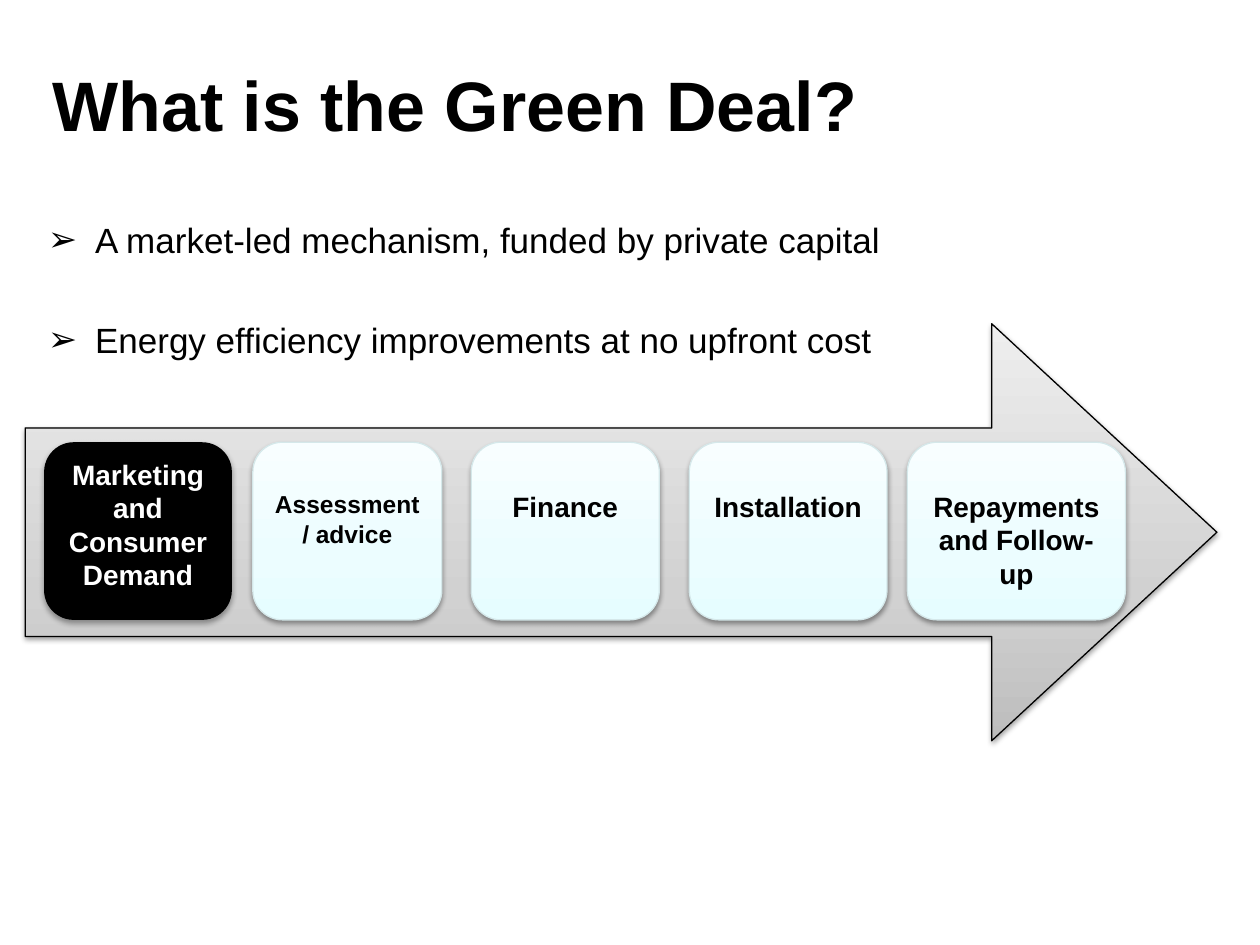
from dataclasses import dataclass

from lxml import etree
from pptx import Presentation
from pptx import util as u
from pptx.dml.color import RGBColor
from pptx.enum import shapes, text
from pptx.oxml import ns

Pt = u.Pt
KIND = shapes.MSO_SHAPE


@dataclass(frozen=True)
class Theme:
    """Colours, type sizes and font of the slide."""
    font: str = "Arial"
    ink: str = "000000"
    pale: str = "FFFFFF"
    edge: str = "D5E8EA"
    grey: tuple = ("BDBDBD", "D1D1D1", "EEEEEE")
    ice: tuple = ("E6FDFF", "ECFDFF", "F8FEFF")
    head: int = 40
    body: int = 20
    step: int = 16
    small: int = 14


THEME = Theme()


def add(node, tag, **attrs):
    """Append a child element and return it."""
    return etree.SubElement(node, ns.qn(tag), attrs)


def style(para, size, color, bold=False):
    """Set the font of a paragraph's runs."""
    for run in para.runs:
        font = run.font
        font.name, font.size, font.bold = THEME.font, Pt(size), bold
        font.color.rgb = RGBColor.from_string(color)


def write(shape, words, size, color, bold=True, align=text.PP_ALIGN.CENTER):
    """Fill a shape with wrapped text and return its paragraphs."""
    frame = shape.text_frame
    frame.word_wrap = True
    frame.text = words
    for para in frame.paragraphs:
        para.alignment = align
        style(para, size, color, bold)
    return frame.paragraphs


def shade(shape, tones):
    """Apply a three-stop gradient that runs upwards."""
    shape.fill.gradient()
    grad = shape.element.spPr.find(ns.qn("a:gradFill"))
    for node in list(grad):
        grad.remove(node)
    stops = add(grad, "a:gsLst")
    for place, tone in zip((0, 35000, 100000), tones):
        add(add(stops, "a:gs", pos=str(place)), "a:srgbClr", val=tone)
    add(grad, "a:lin", ang="16200000", scaled="0")


def drop(shape, alpha):
    """Give a shape a soft shadow below it."""
    shape.shadow.inherit = False
    effect = shape.element.spPr.find(ns.qn("a:effectLst"))
    outer = add(effect, "a:outerShdw", blurRad=str(Pt(3.1)), dist=str(Pt(1.7)),
                dir="5400000", rotWithShape="0")
    tone = add(outer, "a:srgbClr", val=THEME.ink)
    add(tone, "a:alpha", val=str(alpha * 1000))


def block(slide, kind, area, tones, edge):
    """Draw a shaded shape, or a solid one when there is no edge colour."""
    shape = slide.shapes.add_shape(kind, *map(Pt, area))
    if edge:
        shade(shape, tones)
        shape.line.color.rgb = RGBColor.from_string(edge)
        shape.line.width = Pt(0.75)
    else:
        shape.fill.solid()
        shape.fill.fore_color.rgb = RGBColor.from_string(tones)
        shape.line.fill.background()
    drop(shape, 38 if edge else 35)
    return shape


def title(slide, words):
    """Add the slide title."""
    box = slide.shapes.add_textbox(*map(Pt, (21.6, 39.6, 476.6, 39.6)))
    frame = box.text_frame
    frame.vertical_anchor = text.MSO_ANCHOR.MIDDLE
    frame.margin_left = frame.margin_right = 0
    write(box, words, THEME.head, THEME.ink)


def points(slide, items):
    """Add the list with arrow bullets."""
    box = slide.shapes.add_textbox(*map(Pt, (20.2, 121.4, 658, 90)))
    paras = write(box, "\n".join(items), THEME.body, THEME.ink, False,
                  text.PP_ALIGN.LEFT)
    for place, para in enumerate(paras):
        if place:
            para.space_before = Pt(33)
        props = para._p.get_or_add_pPr()
        props.set("marL", str(Pt(27)))
        props.set("indent", str(Pt(-27)))
        add(props, "a:buFont", typeface=THEME.font)
        add(props, "a:buChar", char="➢")


def card(slide, left, width, words, size, dark=False):
    """Add one step of the process."""
    tones, edge = (THEME.ink, None) if dark else (THEME.ice, THEME.edge)
    area = (left, 252.7, width, 101.5)
    shape = block(slide, KIND.ROUNDED_RECTANGLE, area, tones, edge)
    frame = shape.text_frame
    frame.vertical_anchor = text.MSO_ANCHOR.TOP
    frame.margin_top = Pt(3.6 if dark else 22)
    write(shape, words, size, THEME.pale if dark else THEME.ink)


def main():
    """Build and save the slide."""
    deck = Presentation()
    deck.slide_width, deck.slide_height = Pt(720), Pt(540)
    slide = deck.slides.add_slide(deck.slide_layouts[6])
    title(slide, "What is the Green Deal?")
    points(slide, ("A market-led mechanism, funded by private capital",
                   "Energy efficiency improvements at no upfront cost"))
    arrow = block(slide, KIND.RIGHT_ARROW, (14.4, 185, 681, 238.3),
                  THEME.grey, THEME.ink)
    arrow.adjustments[1] = 0.54
    card(slide, 25.2, 107.3, "Marketing\nand\nConsumer Demand", THEME.step, True)
    card(slide, 144.5, 108, "Assessment\n/ advice", THEME.small)
    steps = (("Finance", 107.5), ("Installation", 113),
             ("Repayments and Follow-up", 124.6))
    for place, (words, width) in enumerate(steps):
        card(slide, 269.3 + 124.6 * place, width, words, THEME.step)
    deck.save("out.pptx")


if __name__ == "__main__":
    main()
